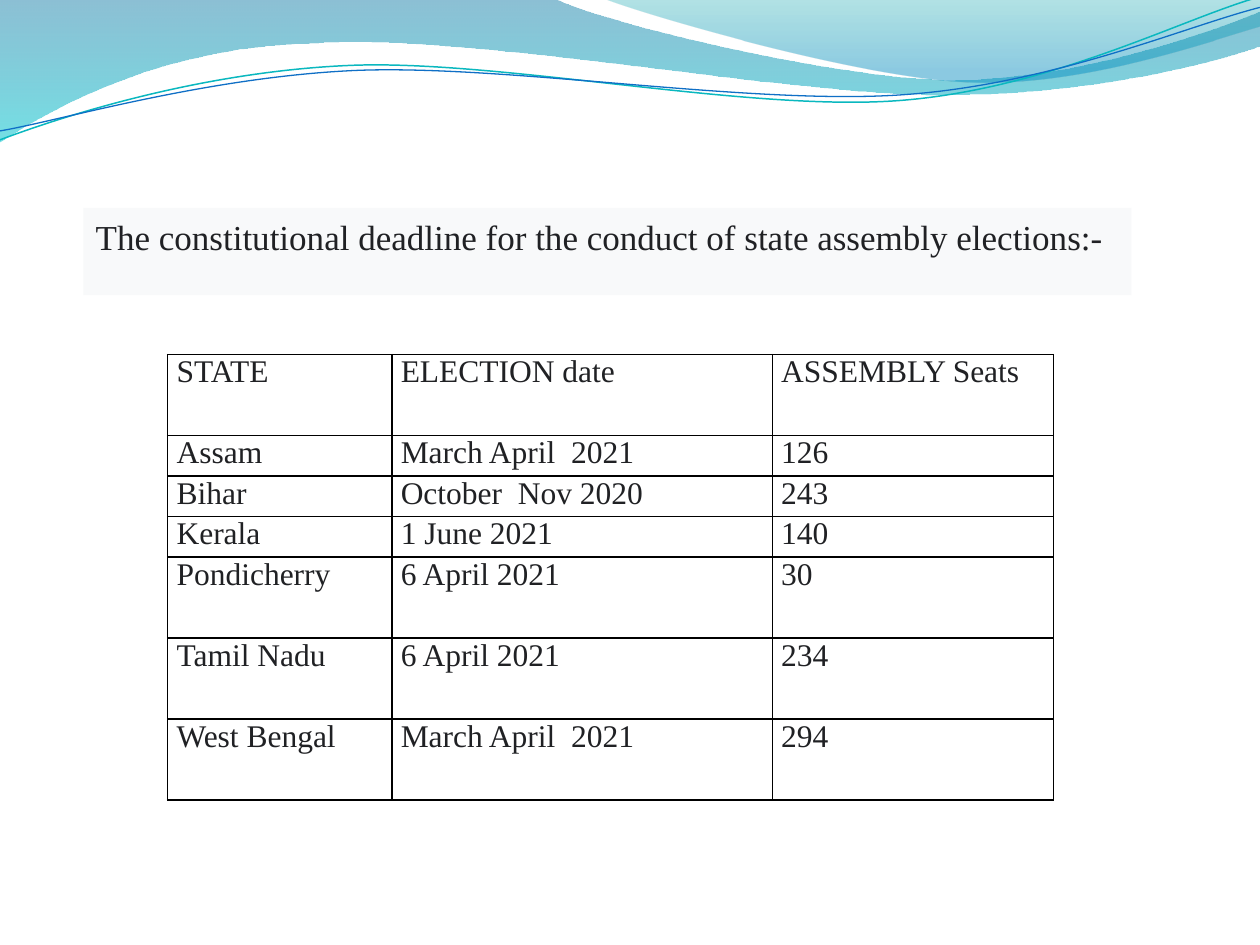
import pptx
import pptx.dml.color
import pptx.enum.shapes
import pptx.enum.text
import pptx.oxml
import pptx.oxml.ns
import pptx.util

Cm = pptx.util.Cm
COLORS = {
    "text": "202124", "title band": "F8F9FA", "border": "000000",
    "deep blue": "0074A1", "aqua": "00C6CF", "teal": "00A1A9", "sky": "008BBF",
    "teal line": "0AB8BF", "blue line": "0F6FC6",
}
FONT = "Times New Roman"
DRAWING_NS = pptx.oxml.ns.nsdecls("a")


def rgb(name):
    return pptx.dml.color.RGBColor.from_string(COLORS[name])


def draw_path(shapes, start, segments, closed):
    """Draw lines (x, y) and Bezier curves (x1, y1, x2, y2, x, y), in cm."""
    points = [(Cm(segment[i]), Cm(segment[i + 1]))
              for segment in segments for i in range(0, len(segment), 2)]
    builder = shapes.build_freeform(Cm(start[0]), Cm(start[1]), scale=1.0)
    builder.add_line_segments(points, close=closed)
    outline = builder.convert_to_shape()
    outline.shadow.inherit = False
    # Join each three points of a curve into one Bezier segment
    line_tags = iter(list(outline.element.iter(pptx.oxml.ns.qn("a:lnTo"))))
    for segment in segments:
        tags = [next(line_tags) for _ in range(len(segment) // 2)]
        if len(tags) == 3:
            bezier = pptx.oxml.parse_xml(f"<a:cubicBezTo {DRAWING_NS}/>")
            tags[0].addprevious(bezier)
            for tag in tags:
                bezier.append(tag[0])
                tag.getparent().remove(tag)
    return outline


deck = pptx.Presentation()
deck.slide_width, deck.slide_height = Cm(25.4), Cm(19.05)
slide = deck.slides.add_slide(deck.slide_layouts[6])

# Translucent waves: start, segments, gradient stops (position, colour, opacity %)
waves = [
    ((0, 0),
     [(11.18, -0.03),
      (12.09, 0.43, 16.87, 1.6, 19.25, 1.6),
      (21.67, 1.6, 24.33, 0.66, 25.4, 0.23),
      (25.43, 0.91),
      (24.97, 1.12, 22.1, 1.93, 18.95, 1.91),
      (15.8, 1.91, 9.7, 0.71, 6.53, 0.86),
      (3.28, 0.91, 1.17, 2.11, -0.03, 2.87)],
     [(0, "deep blue", 45), (1, "aqua", 55)]),
    ((12.17, -0.03),
     [(12.93, 0.28, 17.32, 1.57, 19.53, 1.65),
      (21.82, 1.75, 24.41, 0.81, 25.4, 0.53),
      (25.4, 0)],
     [(0, "teal", 30), (0.8, "sky", 45)]),
]
for start, segments, stops in waves:
    wave = draw_path(slide.shapes, start, segments, True)
    wave.line.fill.background()
    wave.fill.gradient()
    wave.fill.gradient_angle = 270
    for stop, (position, color, opacity) in zip(wave.fill.gradient_stops, stops):
        stop.position = position
        stop.color.rgb = rgb(color)
    color_tags = wave.element.spPr.iter(pptx.oxml.ns.qn("a:srgbClr"))
    for color_tag, (position, color, opacity) in zip(color_tags, stops):
        color_tag.append(pptx.oxml.parse_xml(
            f'<a:alpha {DRAWING_NS} val="{opacity * 1000}"/>'))

# Thin curves over the waves
curves = [
    ((0, 2.82),
     [(1.22, 2.36, 4.01, 1.45, 7.04, 1.32),
      (10.03, 1.19, 15.06, 2.26, 18.11, 2.03),
      (21.16, 1.8, 23.83, 0.38, 25.35, -0.05)],
     "teal line", 0.85),
    ((0, 2.64),
     [(1.19, 2.44, 4.17, 1.55, 7.19, 1.42),
      (10.24, 1.3, 15.16, 2.13, 18.21, 1.91),
      (21.23, 1.7, 23.9, 0.53, 25.4, 0.15)],
     "blue line", 0.75),
]
for start, segments, color, width in curves:
    curve = draw_path(slide.shapes, start, segments, False)
    curve.fill.background()
    curve.line.color.rgb = rgb(color)
    curve.line.width = pptx.util.Pt(width)

# Election table
elections = [
    ("STATE", "ELECTION date", "ASSEMBLY Seats"),
    ("Assam", "March April  2021", "126"),
    ("Bihar", "October  Nov 2020", "243"),
    ("Kerala", "1 June 2021", "140"),
    ("Pondicherry", "6 April 2021", "30"),
    ("Tamil Nadu", "6 April 2021", "234"),
    ("West Bengal", "March April  2021", "294"),
]
column_widths = [4.52, 7.67, 5.67]
row_lines = [2, 1, 1, 1, 2, 2, 2]
table_height = 8.98
cell_format = {"margin_left": Cm(0.18), "margin_right": Cm(0.18),
               "margin_top": 0, "margin_bottom": 0}
table_font = {"name": FONT, "size": pptx.util.Pt(18), "bold": False}

schedule = slide.shapes.add_table(
    len(elections), len(column_widths), Cm(3.38), Cm(7.15),
    Cm(sum(column_widths)), Cm(table_height)).table
schedule.first_row = schedule.horz_banding = False
for column, width in zip(schedule.columns, column_widths):
    column.width = Cm(width)
for row, lines, entries in zip(schedule.rows, row_lines, elections):
    row.height = Cm(table_height * lines / sum(row_lines))
    for cell, entry in zip(row.cells, entries):
        cell.text = entry
        for attribute, value in cell_format.items():
            setattr(cell, attribute, value)
        entry_font = cell.text_frame.paragraphs[0].runs[0].font
        for attribute, value in table_font.items():
            setattr(entry_font, attribute, value)
        entry_font.color.rgb = rgb("text")
        cell_properties = cell._tc.get_or_add_tcPr()
        for side in "LRTB":
            cell_properties.append(pptx.oxml.parse_xml(
                f'<a:ln{side} {DRAWING_NS} w="12700"><a:solidFill>'
                f'<a:srgbClr val="{COLORS["border"]}"/></a:solidFill></a:ln{side}>'))
        cell.fill.background()

# Title band
title = slide.shapes.add_shape(pptx.enum.shapes.MSO_SHAPE.RECTANGLE,
                               Cm(1.68), Cm(4.19), Cm(21.13), Cm(1.76))
title.shadow.inherit = False
title.fill.solid()
title.fill.fore_color.rgb = rgb("title band")
title.line.fill.background()
title_format = {"margin_left": Cm(0.25), "margin_right": Cm(0.25),
                "margin_top": Cm(0.16), "margin_bottom": 0, "word_wrap": True,
                "vertical_anchor": pptx.enum.text.MSO_ANCHOR.TOP}
for attribute, value in title_format.items():
    setattr(title.text_frame, attribute, value)
heading = title.text_frame.paragraphs[0]
heading.alignment = pptx.enum.text.PP_ALIGN.LEFT
heading.text = "The constitutional deadline for the conduct of state assembly elections:-"
title_font = {"name": FONT, "size": pptx.util.Pt(20)}
for attribute, value in title_font.items():
    setattr(heading.runs[0].font, attribute, value)
heading.runs[0].font.color.rgb = rgb("text")

deck.save("out.pptx")
